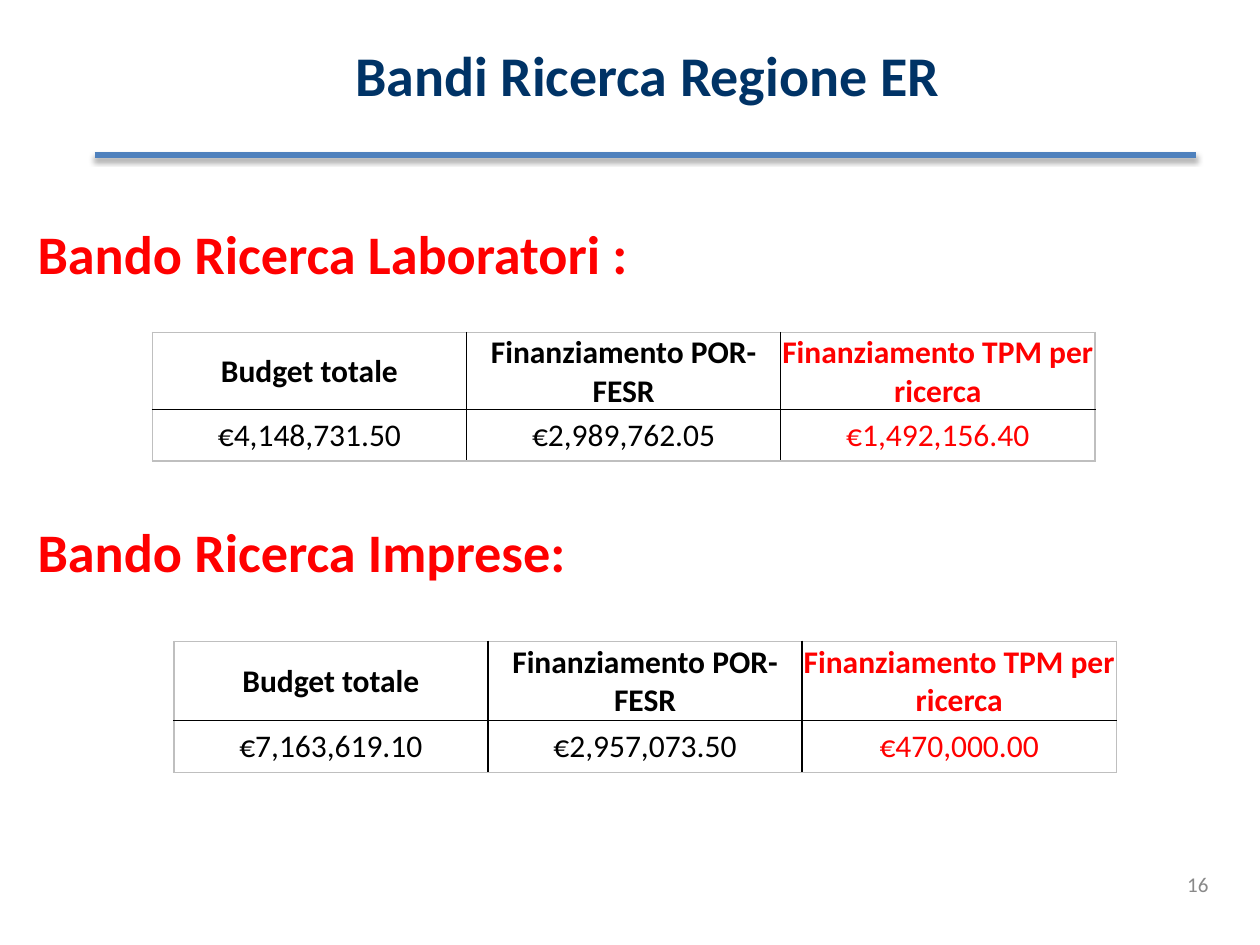
from lxml import etree
from pptx import Presentation
from pptx.dml.color import RGBColor
from pptx.enum.shapes import MSO_CONNECTOR
from pptx.enum.text import MSO_ANCHOR, PP_ALIGN
from pptx.oxml import parse_xml
from pptx.oxml.ns import nsdecls, qn
from pptx.util import Inches, Pt

STRAIGHT = MSO_CONNECTOR.STRAIGHT
TOP, MIDDLE = MSO_ANCHOR.TOP, MSO_ANCHOR.MIDDLE
LEFT, CENTER, RIGHT = PP_ALIGN.LEFT, PP_ALIGN.CENTER, PP_ALIGN.RIGHT

FONT = "Calibri"
COLORS = {
    "title": "003366",
    "accent": "FF0000",
    "body": "000000",
    "rule": "4F81BD",
    "number": "898989",
    "inner": "000000",
    "outer": "BFBFBF",
}
HEADERS = ["Budget totale", "Finanziamento POR-FESR", "Finanziamento TPM per ricerca"]


def rgb(name):
    return RGBColor.from_string(COLORS[name])


def style(paragraph, size, color, bold, align):
    paragraph.alignment = align
    font = paragraph.font
    font.name, font.size, font.bold = FONT, Pt(size), bold
    font.color.rgb = rgb(color)


def add_text(slide, box, text, size, color, bold=False, align=LEFT, anchor=TOP):
    frame = slide.shapes.add_textbox(*map(Inches, box)).text_frame
    frame.word_wrap = True
    frame.vertical_anchor = anchor
    frame.text = text
    style(frame.paragraphs[0], size, color, bold, align)


def add_rule(slide, left, top, width):
    rule = slide.shapes.add_connector(
        STRAIGHT, Inches(left), Inches(top), Inches(left + width), Inches(top))
    rule.line.color.rgb = rgb("rule")
    rule.line.width = Pt(3)
    effects = etree.SubElement(rule._element.spPr, qn("a:effectLst"))
    effects.append(parse_xml(
        f'<a:outerShdw {nsdecls("a")} blurRad="{Pt(3.1)}" dist="{Pt(1.8)}" '
        'dir="5400000" rotWithShape="0"><a:srgbClr val="000000">'
        '<a:alpha val="35000"/></a:srgbClr></a:outerShdw>'))


def set_borders(cell, is_outer):
    properties = cell._tc.get_or_add_tcPr()
    for index, side in enumerate(("lnL", "lnR", "lnT", "lnB")):
        color = COLORS["outer" if is_outer[side] else "inner"]
        properties.insert(index, parse_xml(
            f'<a:{side} {nsdecls("a")} w="{Pt(1)}"><a:solidFill>'
            f'<a:srgbClr val="{color}"/></a:solidFill></a:{side}>'))


def add_funding_table(slide, left, top, width, row_heights, amounts):
    rows = [HEADERS, amounts]
    last_row, last_column = len(rows) - 1, len(HEADERS) - 1
    table = slide.shapes.add_table(
        len(rows), len(HEADERS), Inches(left), Inches(top),
        Inches(width), Inches(sum(row_heights))).table
    table.first_row = table.horz_banding = False
    for column in table.columns:
        column.width = Inches(width / len(HEADERS))
    for r, (height, texts) in enumerate(zip(row_heights, rows)):
        table.rows[r].height = Inches(height)
        for c, text in enumerate(texts):
            cell = table.cell(r, c)
            cell.fill.background()
            cell.margin_left = cell.margin_right = cell.margin_top = Inches(0.01)
            cell.margin_bottom = 0
            cell.vertical_anchor = MIDDLE
            cell.text = text
            color = "accent" if c == last_column else "body"
            style(cell.text_frame.paragraphs[0], 18, color, r == 0, CENTER)
            set_borders(cell, {"lnL": c == 0, "lnR": c == last_column,
                               "lnT": r == 0, "lnB": r == last_row})


def add_call(slide, heading_box, heading, table_box, row_heights, amounts):
    add_text(slide, heading_box, heading, 31, "accent", bold=True)
    add_funding_table(slide, *table_box, row_heights, amounts)


def main():
    deck = Presentation()
    deck.slide_width, deck.slide_height = Inches(10), Inches(7.5)
    slide = deck.slides.add_slide(deck.slide_layouts[6])
    add_rule(slide, 0.75, 1.23, 8.74)
    add_text(slide, (0.67, 0.28, 8.94, 0.61), "Bandi Ricerca Regione ER",
             32, "title", True, CENTER, MIDDLE)
    add_call(slide, (0.2, 1.7, 5.73, 0.62), "Bando Ricerca Laboratori :",
             (1.21, 2.64, 7.48), (0.61, 0.41),
             ["€4,148,731.50", "€2,989,762.05", "€1,492,156.40"])
    add_call(slide, (0.2, 4.06, 5.13, 0.62), "Bando Ricerca Imprese:",
             (1.38, 5.09, 7.48), (0.63, 0.41),
             ["€7,163,619.10", "€2,957,073.50", "€470,000.00"])
    add_text(slide, (7.36, 6.82, 2.33, 0.4), "16", 12, "number",
             align=RIGHT, anchor=MIDDLE)
    deck.save("out.pptx")


if __name__ == "__main__":
    main()
